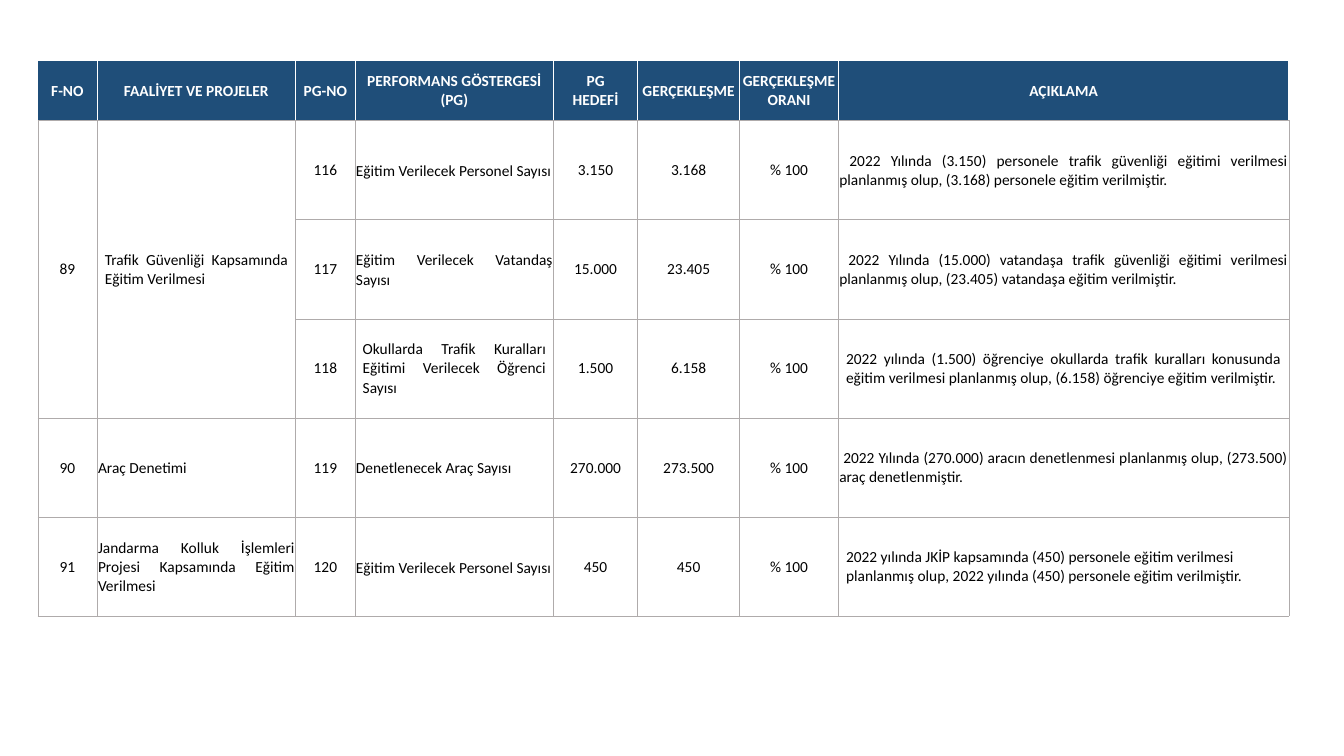
from dataclasses import dataclass

import pptx
import pptx.dml.color
import pptx.enum.text
import pptx.oxml
import pptx.oxml.ns
import pptx.util
from pptx.util import Cm

ALIGN = pptx.enum.text.PP_ALIGN


@dataclass(frozen=True)
class Theme:
    font: str = "Calibri"
    size: float = 11
    header_fill: str = "1F4E79"
    header_text: str = "FFFFFF"
    body_text: str = "000000"
    header_line: str = "FFFFFF"
    grid_line: str = "AFABAB"


THEME = Theme()

COLUMN_WIDTHS = [1.5, 5, 1.5, 5, 2.12, 2.57, 2.49, 11.35]
HEADER_HEIGHT, BODY_HEIGHT = 1.5, 2.5

HEADINGS = ["F-NO", "FAALİYET VE PROJELER", "PG-NO", "PERFORMANS GÖSTERGESİ (PG)",
            "PG\nHEDEFİ", "GERÇEKLEŞME", "GERÇEKLEŞME ORANI", "AÇIKLAMA"]

# An empty string is a cell covered by the merged one above it
INDICATORS = [
    ["89", "Trafik Güvenliği Kapsamında Eğitim Verilmesi", "116",
     "Eğitim Verilecek Personel Sayısı", "3.150", "3.168", "% 100",
     " 2022 Yılında (3.150) personele trafik güvenliği eğitimi verilmesi "
     "planlanmış olup, (3.168) personele eğitim verilmiştir."],
    ["", "", "117", "Eğitim Verilecek Vatandaş Sayısı", "15.000", "23.405", "% 100",
     " 2022 Yılında (15.000) vatandaşa trafik güvenliği eğitimi verilmesi "
     "planlanmış olup, (23.405) vatandaşa eğitim verilmiştir."],
    ["", "", "118", "Okullarda Trafik Kuralları Eğitimi Verilecek Öğrenci Sayısı",
     "1.500", "6.158", "% 100",
     "2022 yılında (1.500) öğrenciye okullarda trafik kuralları konusunda "
     "eğitim verilmesi planlanmış olup, (6.158) öğrenciye eğitim verilmiştir."],
    ["90", "Araç Denetimi", "119", "Denetlenecek Araç Sayısı",
     "270.000", "273.500", "% 100",
     " 2022 Yılında (270.000) aracın denetlenmesi planlanmış olup, "
     "(273.500) araç denetlenmiştir."],
    ["91", "Jandarma Kolluk İşlemleri Projesi Kapsamında Eğitim Verilmesi", "120",
     "Eğitim Verilecek Personel Sayısı", "450", "450", "% 100",
     "2022 yılında JKİP kapsamında (450) personele eğitim verilmesi "
     "planlanmış olup, 2022 yılında (450) personele eğitim verilmiştir."],
]

PROSE_COLUMNS = {1, 3, 7}
LEFT_ALIGNED = {(5, 7)}
LOOSE_LINES = {(1, 3), (2, 3), (5, 3)}
WIDE_MARGINS = {(1, 1), (1, 2), (2, 2), (5, 7)} | {(3, column) for column in range(2, 8)}


def rgb(value):
    return pptx.dml.color.RGBColor.from_string(value)


def set_borders(cell, sides):
    """Draw the four sides, given in the order left, right, top, bottom."""
    properties = cell._tc.get_or_add_tcPr()
    for index, (side, (color, width)) in enumerate(zip("LRTB", sides)):
        line = pptx.oxml.parse_xml(
            f'<a:ln{side} {pptx.oxml.ns.nsdecls("a")} w="{pptx.util.Pt(width)}">'
            f'<a:solidFill><a:srgbClr val="{color}"/></a:solidFill>'
            f'<a:prstDash val="solid"/></a:ln{side}>')
        properties.insert(index, line)


def write_cell(cell, text, color, align, bold=False, wide=False):
    cell.vertical_anchor = pptx.enum.text.MSO_ANCHOR.MIDDLE
    cell.margin_left = cell.margin_right = Cm(0.19 if wide else 0.02)
    cell.margin_top, cell.margin_bottom = Cm(0.02), Cm(0)
    para = cell.text_frame.paragraphs[0]
    for index, line in enumerate(text.split("\n")):
        if index:
            para.add_line_break()
        para.add_run().text = line
    para.alignment = align
    para.font.name = THEME.font
    para.font.size = pptx.util.Pt(THEME.size)
    para.font.bold = bold
    para.font.color.rgb = rgb(color)
    return para


def fill_header(table):
    white, gray = (THEME.header_line, 1), (THEME.grid_line, 0.25)
    for column, heading in enumerate(HEADINGS):
        cell = table.cell(0, column)
        write_cell(cell, heading, THEME.header_text, ALIGN.CENTER, bold=True)
        cell.fill.solid()
        cell.fill.fore_color.rgb = rgb(THEME.header_fill)
        set_borders(cell, [white, white, white, gray])


def fill_body(table):
    thin, medium = (THEME.grid_line, 0.25), (THEME.grid_line, 0.5)
    last = len(HEADINGS) - 1
    for row, texts in enumerate(INDICATORS, start=1):
        for column, text in enumerate(texts):
            cell, place = table.cell(row, column), (row, column)
            cell.fill.background()
            set_borders(cell, [thin if column == 0 else medium,
                               thin if column == last else medium, thin, thin])
            if not text:
                continue
            align = ALIGN.JUSTIFY if column in PROSE_COLUMNS else ALIGN.CENTER
            if place in LEFT_ALIGNED:
                align = ALIGN.LEFT
            para = write_cell(cell, text, THEME.body_text, align,
                              wide=place in WIDE_MARGINS)
            if place in LOOSE_LINES:
                para.line_spacing = 1.07


def add_indicator_table(page):
    row_count = len(INDICATORS) + 1
    height = HEADER_HEIGHT + BODY_HEIGHT * len(INDICATORS)
    frame = page.shapes.add_table(row_count, len(HEADINGS), Cm(0.95), Cm(1.53),
                                  Cm(sum(COLUMN_WIDTHS)), Cm(height))
    table = frame.table
    table.first_row = table.horz_banding = False
    for column, width in zip(table.columns, COLUMN_WIDTHS):
        column.width = Cm(width)
    for index, row in enumerate(table.rows):
        row.height = Cm(BODY_HEIGHT if index else HEADER_HEIGHT)
    # Activity 89 covers three indicators
    for column in (0, 1):
        table.cell(1, column).merge(table.cell(3, column))
    fill_header(table)
    fill_body(table)


def main():
    deck = pptx.Presentation()
    deck.slide_width, deck.slide_height = Cm(33.87), Cm(19.05)
    page = deck.slides.add_slide(deck.slide_layouts[6])
    add_indicator_table(page)
    deck.save("out.pptx")


if __name__ == "__main__":
    main()
